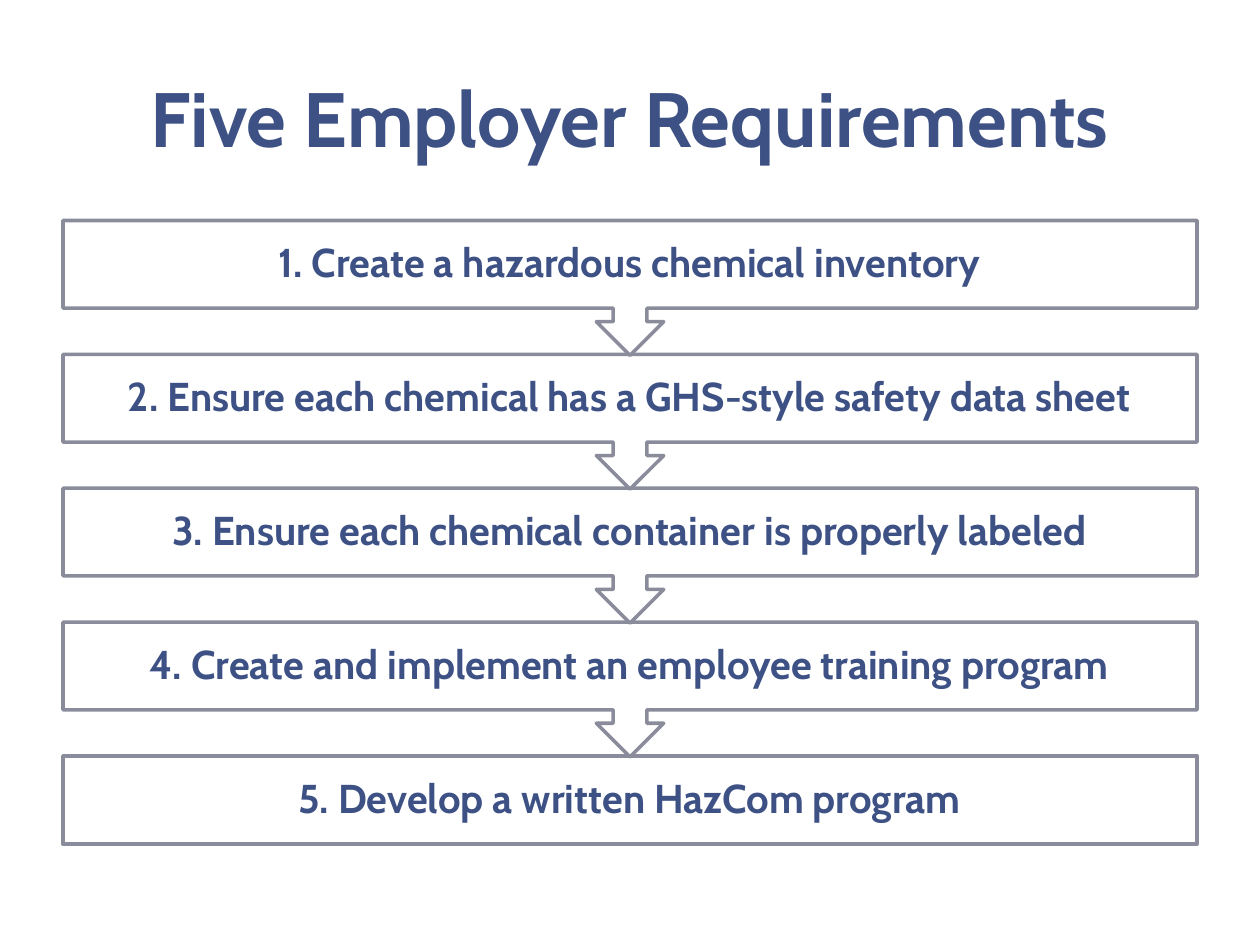
from dataclasses import dataclass

from pptx import Presentation
from pptx.dml.color import RGBColor
from pptx.enum.shapes import MSO_SHAPE
from pptx.enum.text import MSO_ANCHOR, PP_ALIGN
from pptx.slide import Slide
from pptx.util import Inches, Pt

RECT = MSO_SHAPE.RECTANGLE
ARROW = MSO_SHAPE.UP_ARROW_CALLOUT
MIDDLE = MSO_ANCHOR.MIDDLE
CENTER = PP_ALIGN.CENTER


@dataclass(frozen=True)
class Theme:
    face: str = "Cabin"
    ink: RGBColor = RGBColor(0x3D, 0x51, 0x85)
    edge: RGBColor = RGBColor(0x8A, 0x8C, 0x9C)
    paper: RGBColor = RGBColor(0xFF, 0xFF, 0xFF)
    title: Pt = Pt(44)
    body: Pt = Pt(23)
    line: Pt = Pt(2)


@dataclass(frozen=True)
class Box:
    left: float
    top: float
    width: float
    height: float

    def frame(self) -> tuple:
        return tuple(map(Inches, (self.left, self.top, self.width, self.height)))


THEME = Theme()
LEFT, WIDTH = 0.5, 9
TOP, PITCH = 1.75, 1.0625
BODY, CALL = 0.7, 1.07
STEPS = (
    "Create a hazardous chemical inventory",
    "Ensure each chemical has a GHS-style safety data sheet",
    "Ensure each chemical container is properly labeled",
    "Create and implement an employee training program",
    "Develop a written HazCom program",
)


def apply(target: object, values: dict) -> None:
    for name, value in values.items():
        setattr(target, name, value)


def write(slide: Slide, box: Box, text: str, size: Pt, inset: float, space: float) -> None:
    frame = slide.shapes.add_textbox(*box.frame()).text_frame
    sides = ("left", "top", "right", "bottom")
    apply(frame, {f"margin_{side}": Inches(inset) for side in sides})
    apply(frame, {"word_wrap": True, "vertical_anchor": MIDDLE})
    para = frame.paragraphs[0]
    apply(para, {"text": text, "alignment": CENTER, "line_spacing": space})
    font = para.runs[0].font
    apply(font, {"name": THEME.face, "size": size, "bold": True})
    font.color.rgb = THEME.ink


def outline(slide: Slide, box: Box, kind: MSO_SHAPE, turn: float) -> None:
    shape = slide.shapes.add_shape(kind, *box.frame())
    shape.rotation = turn
    shape.shadow.inherit = False
    shape.fill.solid()
    shape.fill.fore_color.rgb = THEME.paper
    shape.line.color.rgb = THEME.edge
    shape.line.width = THEME.line


def step(slide: Slide, index: int, text: str) -> None:
    top = TOP + index * PITCH
    body = Box(LEFT, top, WIDTH, BODY)
    if index == len(STEPS) - 1:
        outline(slide, body, RECT, 0)
    else:
        outline(slide, Box(LEFT, top, WIDTH, CALL), ARROW, 180)
    write(slide, body, f"{index + 1}. {text}", THEME.body, 0.18, 0.9)


def main() -> None:
    """Build the slide of five employer requirements."""
    deck = Presentation()
    apply(deck, {"slide_width": Inches(10), "slide_height": Inches(7.5)})
    slide = deck.slides.add_slide(deck.slide_layouts[6])
    head = Box(LEFT, 0.3, WIDTH, 1.25)
    write(slide, head, "Five Employer Requirements", THEME.title, 0.1, 1.0)
    for index, text in reversed(list(enumerate(STEPS))):
        step(slide, index, text)
    deck.save("out.pptx")


if __name__ == "__main__":
    main()
